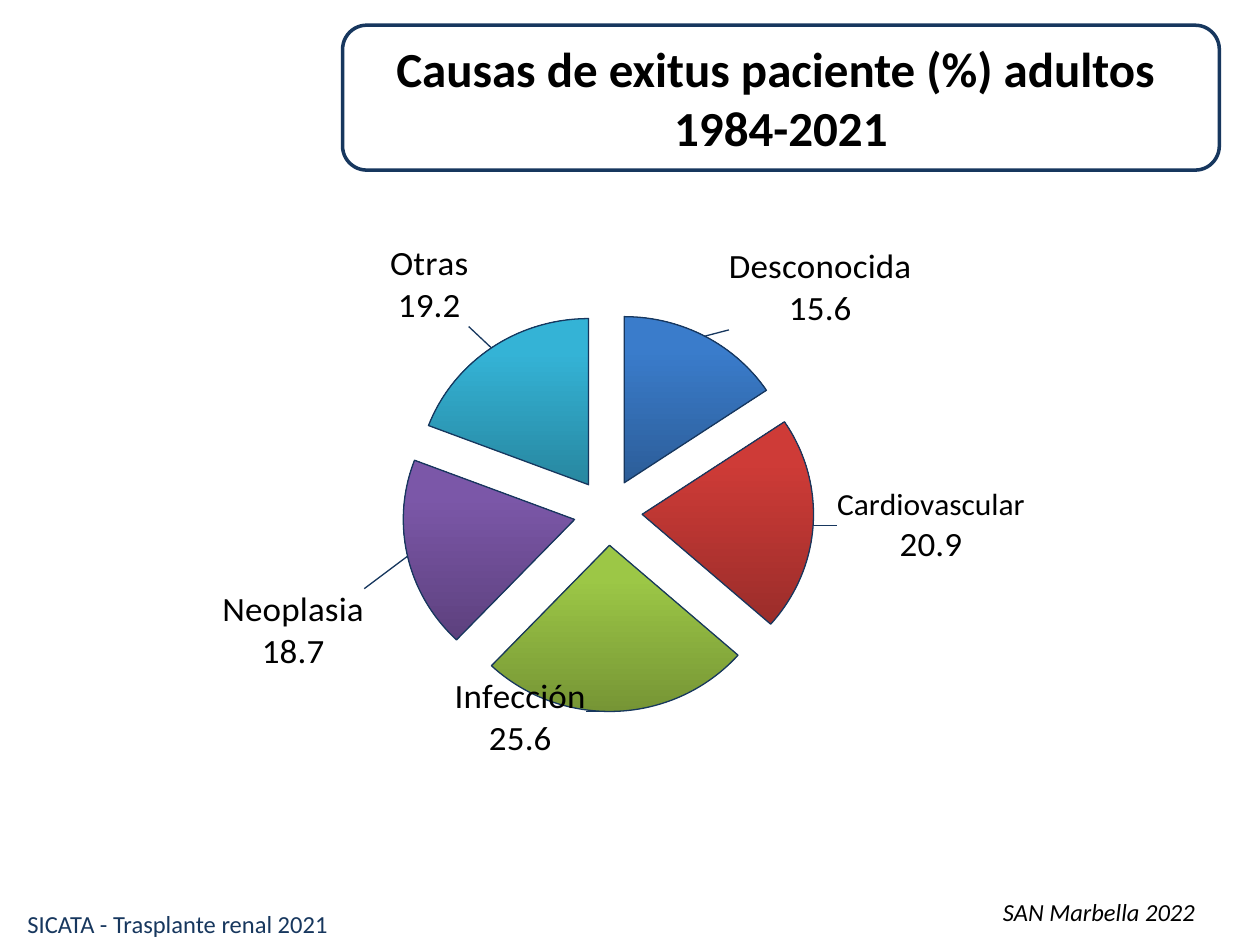
from dataclasses import dataclass

from lxml.etree import SubElement
from pptx import Presentation
from pptx.chart.data import CategoryChartData
from pptx.dml.color import RGBColor
from pptx.enum.chart import XL_CHART_TYPE, XL_LABEL_POSITION
from pptx.enum.shapes import MSO_SHAPE
from pptx.enum.text import MSO_ANCHOR, PP_ALIGN
from pptx.oxml import parse_xml
from pptx.oxml.ns import nsdecls, qn
from pptx.util import Pt

NAVY, BLACK = "17375E", "000000"


@dataclass
class Cause:
    category: str
    label: str
    value: float
    bottom: str
    top: str
    shift: tuple[float, float]  # label offset, as a share of the chart size
    label_size: int = 20


@dataclass
class Note:
    text: str
    frame: tuple[float, float, float, float]
    color: str
    italic: bool = False


CAUSES = [
    Cause("Desconocida", "Desconocida", 15.6, "2C5D98", "3A7CCB", (0.02, 0)),
    Cause("Cardiovascular", "Cardiovascular", 20.9, "9B2D2A", "CE3B37", (0.016, 0), 18),
    Cause("Infecciosa", "Infección", 25.6, "769535", "9CC746", (-0.094, -0.07)),
    Cause("Neoplasia", "Neoplasia", 18.7, "5D417E", "7B57A8", (-0.035, 0.05)),
    Cause("Otras", "Otras", 19.2, "2787A0", "34B3D6", (-0.018, -0.025)),
]
NOTES = [
    Note("SICATA - Trasplante renal 2021", (8.6, 516, 199, 24), NAVY),
    Note("SAN Marbella 2022", (566, 509, 142, 24), BLACK, italic=True),
]


def rgb(color: str) -> RGBColor:
    return RGBColor.from_string(color)


def style_font(font, color: str, **formats) -> None:
    font.color.rgb = rgb(color)
    for name, value in {"name": "Calibri", **formats}.items():
        setattr(font, name, value)


def outline(line, width: float) -> None:
    line.color.rgb = rgb(NAVY)
    line.width = Pt(width)


def add_layout(parent, position: int, **values) -> None:
    """Insert a manual chart layout at the given child position."""
    layout = parse_xml(f"<c:layout {nsdecls('c')}><c:manualLayout/></c:layout>")
    for name, value in values.items():
        SubElement(layout[0], qn(f"c:{name}")).set("val", str(value))
    parent.insert(position, layout)


def style_slice(point, cause: Cause) -> None:
    fill = point.format.fill
    fill.gradient()
    fill.gradient_angle = 90
    for stop, color, position in zip(
        fill.gradient_stops, (cause.bottom, cause.top), (0, 0.8)
    ):
        stop.color.rgb = rgb(color)
        stop.position = position
    outline(point.format.line, 0.75)

    # Two-line label: cause, then percentage
    label = point.data_label
    frame = label.text_frame
    frame.text = f"{cause.label}\n{cause.value}"
    for para, size in zip(frame.paragraphs, (cause.label_size, 20)):
        style_font(para.runs[0].font, BLACK, size=Pt(size), bold=False)
    label.position = XL_LABEL_POSITION.OUTSIDE_END


def add_pie(page) -> None:
    data = CategoryChartData()
    data.categories = [cause.category for cause in CAUSES]
    data.add_series("Series 1", [cause.value for cause in CAUSES])
    chart = page.shapes.add_chart(
        XL_CHART_TYPE.PIE, Pt(70.6), Pt(94.3), Pt(589.7), Pt(364.3), data
    ).chart
    chart.has_legend = False
    chart.has_title = False
    style_font(chart.font, BLACK, size=Pt(18))
    plot = chart.plots[0]
    plot.vary_by_categories = True
    series = plot.series[0]

    labels = series.data_labels
    labels.show_value = labels.show_category_name = True
    labels.position = XL_LABEL_POSITION.OUTSIDE_END
    style_font(labels.font, BLACK, size=Pt(20), bold=False)
    for index, cause in enumerate(CAUSES):
        style_slice(series.points[index], cause)

    # Label offsets, leader lines, slice explosion and plot position
    block = series._element.find(qn("c:dLbls"))
    for label, cause in zip(block.findall(qn("c:dLbl")), CAUSES):
        x, y = cause.shift
        add_layout(label, 1, x=x, y=y)
    leader = block.find(qn("c:showLeaderLines"))
    if leader is None:
        leader = SubElement(block, qn("c:showLeaderLines"))
    leader.set("val", "1")
    lines = parse_xml(f"<c:leaderLines {nsdecls('c', 'a')}><c:spPr><a:ln w='9525'>"
                      f"<a:solidFill><a:srgbClr val='{NAVY}'/></a:solidFill>"
                      "</a:ln></c:spPr></c:leaderLines>")
    leader.addnext(lines)
    explosion = parse_xml(f"<c:explosion {nsdecls('c')} val='20'/>")
    series._element.find(qn("c:dPt")).addprevious(explosion)
    area = chart._chartSpace.chart.plotArea
    for layout in area.findall(qn("c:layout")):
        area.remove(layout)
    add_layout(area, 0, layoutTarget="inner", xMode="edge", yMode="edge",
               x=0.242, y=0.239, w=0.455, h=0.645)


def add_title(page) -> None:
    box = page.shapes.add_shape(
        MSO_SHAPE.ROUNDED_RECTANGLE, Pt(195.8), Pt(14.4), Pt(501), Pt(82.8)
    )
    box.shadow.inherit = False
    box.fill.background()
    outline(box.line, 2)
    frame = box.text_frame
    frame.word_wrap = True
    frame.vertical_anchor = MSO_ANCHOR.MIDDLE
    frame.text = "Causas de exitus paciente (%) adultos \n1984-2021"
    for para in frame.paragraphs:
        para.alignment = PP_ALIGN.CENTER
        style_font(para.runs[0].font, BLACK, size=Pt(28), bold=True)


def add_note(page, note: Note) -> None:
    frame = page.shapes.add_textbox(*map(Pt, note.frame)).text_frame
    frame.word_wrap = True
    span = frame.paragraphs[0].add_run()
    span.text = note.text
    style_font(span.font, note.color, size=Pt(14), italic=note.italic)


def main() -> None:
    deck = Presentation()
    deck.slide_width, deck.slide_height = Pt(720), Pt(540)
    page = deck.slides.add_slide(deck.slide_layouts[6])
    add_pie(page)
    add_title(page)
    for note in NOTES:
        add_note(page, note)
    deck.save("out.pptx")


if __name__ == "__main__":
    main()
